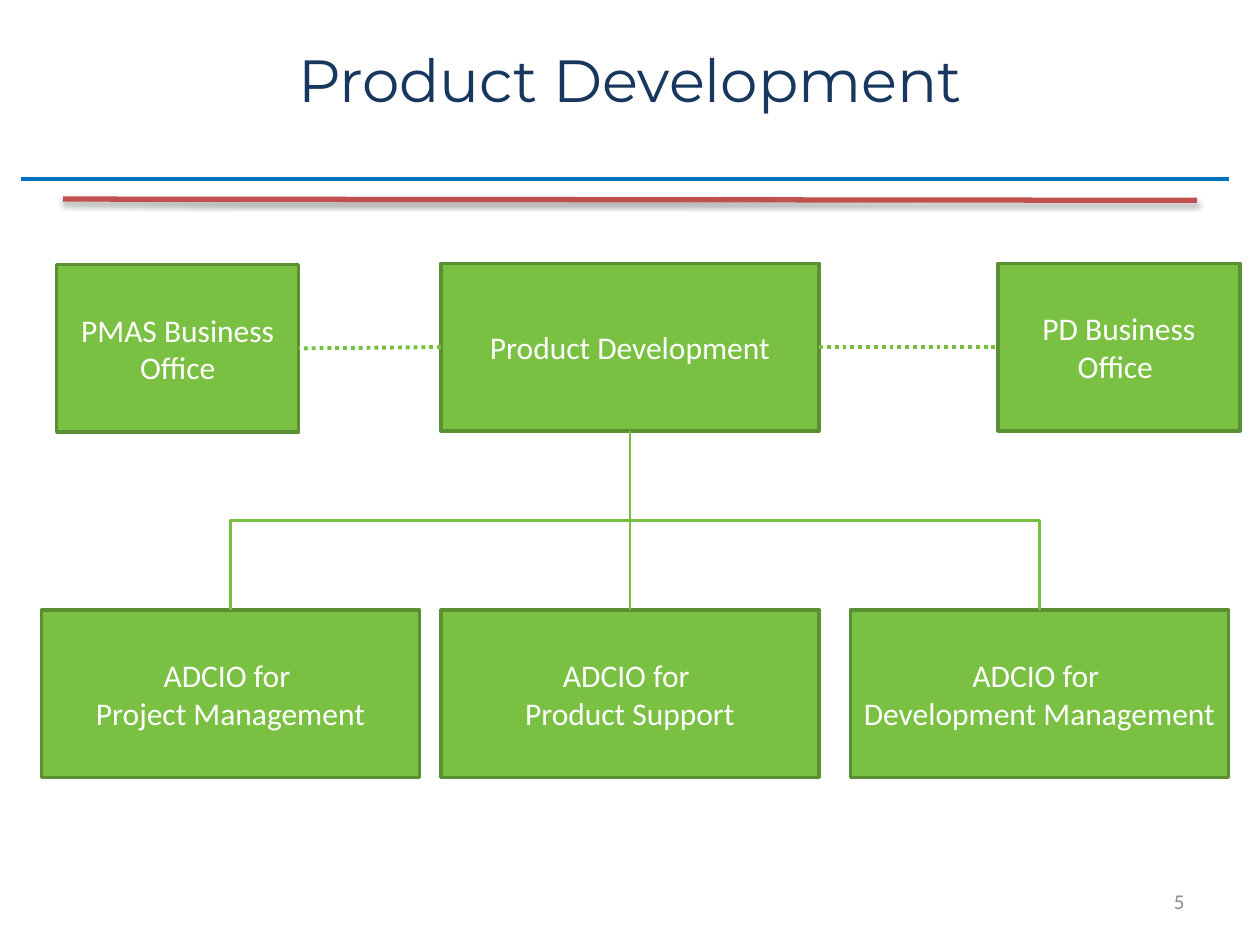
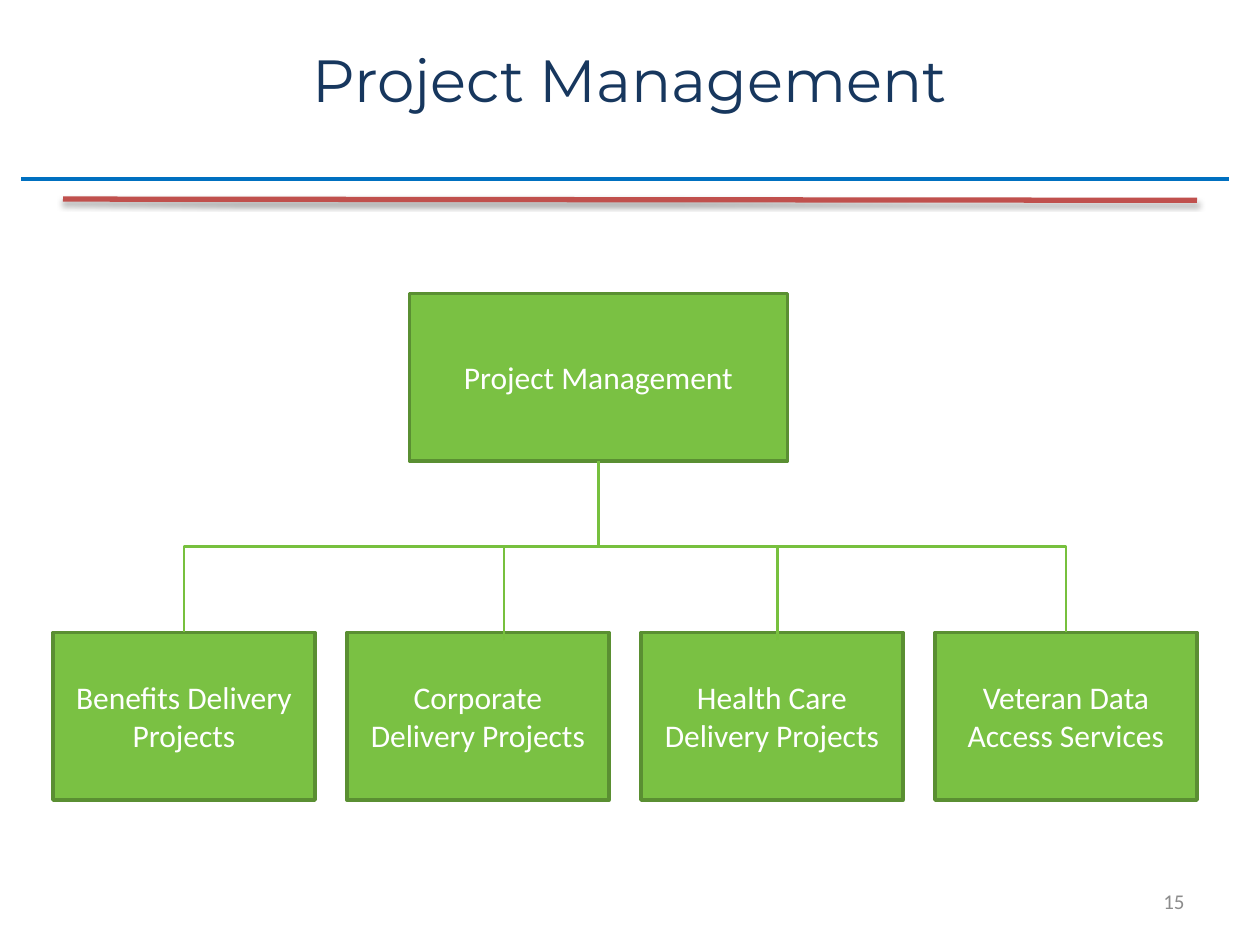
from lxml import etree
from pptx import Presentation
from pptx import util as u
from pptx.dml.color import RGBColor
from pptx.enum import dml, shapes, text
from pptx.oxml.ns import qn

COLORS = {
    "title": "17375E", "blue": "0070C0", "red": "C0504D", "number": "8C8C8C",
    "box": "7AC143", "edge": "5A8F32", "link": "77C03E", "white": "FFFFFF", "shadow": "000000",
}
BOX_HEIGHT = 1.33

CHARTS = [
    {
        "title": "Product Development",
        "number": "5",
        "root": ("Product Development", 3.5, 2.09, 3),
        "staff": [("PD Business Office ", 7.92, 2.09, 1.92), ("PMAS Business Office", 0.45, 2.1, 1.92)],
        "reports": [
            ("ADCIO for \nProject Management", 0.33, 4.84, 3),
            ("ADCIO for \nProduct Support", 3.5, 4.84, 3),
            ("ADCIO for \nDevelopment Management", 6.75, 4.84, 3),
        ],
        "bent": [0, 1, 2],
        "drops": [],
    },
    {
        "title": "Project Management",
        "number": "15",
        "root": ("Project Management", 3.25, 2.33, 3),
        "staff": [],
        "reports": [
            (name, 0.42 + column * 7 / 3, 5.02, 2.08)
            for column, name in enumerate([
                "Benefits Delivery Projects", "Corporate Delivery Projects",
                "Health Care Delivery Projects", "Veteran Data Access Services",
            ])
        ],
        "bent": [0, 3],
        "drops": [4, 6.17],
    },
]


def write(box, words, size, color, font="Calibri", align=text.PP_ALIGN.CENTER):
    frame = box.text_frame
    frame.word_wrap = True
    frame.vertical_anchor = text.MSO_ANCHOR.MIDDLE
    para = frame.paragraphs[0]
    para.text = words
    para.alignment = align
    for span in para.runs:
        span.font.size = u.Pt(size)
        span.font.name = font
        span.font.color.rgb = RGBColor.from_string(COLORS[color])


def draw_line(page, start, end, color, width, kind=shapes.MSO_CONNECTOR.STRAIGHT):
    line = page.shapes.add_connector(kind, *[u.Inches(value) for value in (*start, *end)])
    line.line.color.rgb = RGBColor.from_string(COLORS[color])
    line.line.width = u.Pt(width)
    etree.SubElement(line._element.spPr, qn("a:effectLst"))
    return line


deck = Presentation()
deck.slide_width = u.Inches(10)
deck.slide_height = u.Inches(7.5)

for chart in CHARTS:
    page = deck.slides.add_slide(deck.slide_layouts[6])

    draw_line(page, (0.17, 1.42), (9.75, 1.42), "blue", 2)
    red_rule = draw_line(page, (0.5, 1.58), (9.5, 1.59), "red", 3)
    shadow = etree.SubElement(
        red_rule._element.spPr.find(qn("a:effectLst")), qn("a:outerShdw"),
        blurRad=str(u.Pt(3.1)), dist=str(u.Pt(1.8)), dir="5400000", rotWithShape="0",
    )
    shade = etree.SubElement(shadow, qn("a:srgbClr"), val=COLORS["shadow"])
    etree.SubElement(shade, qn("a:alpha"), val="35000")

    title = page.shapes.add_textbox(u.Inches(0.5), 0, u.Inches(9), u.Inches(1.25))
    write(title, chart["title"], 34, "title", font="Montserrat")
    number = page.shapes.add_textbox(u.Inches(7.17), u.Inches(6.95), u.Inches(2.33), u.Inches(0.4))
    write(number, chart["number"], 12, "number", align=text.PP_ALIGN.RIGHT)

    boxes = []
    for name, left, top, width in [chart["root"], *chart["staff"], *chart["reports"]]:
        box = page.shapes.add_shape(
            shapes.MSO_SHAPE.RECTANGLE,
            u.Inches(left), u.Inches(top), u.Inches(width), u.Inches(BOX_HEIGHT),
        )
        box.shadow.inherit = False
        box.fill.solid()
        box.fill.fore_color.rgb = RGBColor.from_string(COLORS["box"])
        box.line.color.rgb = RGBColor.from_string(COLORS["edge"])
        box.line.width = u.Pt(2)
        write(box, name, 18, "white")
        boxes.append(box)
    root = boxes[0]
    staff_count = len(chart["staff"])
    staff, reports = boxes[1:1 + staff_count], boxes[1 + staff_count:]

    for office in staff:
        root_side, office_side = (3, 1) if office.left > root.left else (1, 3)
        link = draw_line(page, (0, 0), (1, 1), "link", 2.25)
        link.begin_connect(root, root_side)
        link.end_connect(office, office_side)
        link.line.dash_style = dml.MSO_LINE.ROUND_DOT

    for index in chart["bent"]:
        report = reports[index]
        link = draw_line(page, (0, 0), (1, 1), "link", 1.5, shapes.MSO_CONNECTOR.ELBOW)
        link.begin_connect(root, 0 + 2)
        link.end_connect(report, 0)
        start_x, start_y = root.left + root.width // 2, root.top + root.height
        end_x, end_y = report.left + report.width // 2, report.top
        drop, reach = end_y - start_y, abs(end_x - start_x)
        link.left = (start_x + end_x - drop) // 2
        link.top = (start_y + end_y - reach) // 2
        link.width, link.height = drop, reach
        frame = link._element.spPr.find(qn("a:xfrm"))
        for flip in ("flipH", "flipV"):
            frame.attrib.pop(flip, None)
        if end_x > start_x:
            frame.set("rot", "16200000")
            frame.set("flipH", "1")
        else:
            frame.set("rot", "5400000")

    for x in chart["drops"]:
        draw_line(page, (x, 5.08), (x, 4.33), "link", 1.5)

deck.save("out.pptx")
